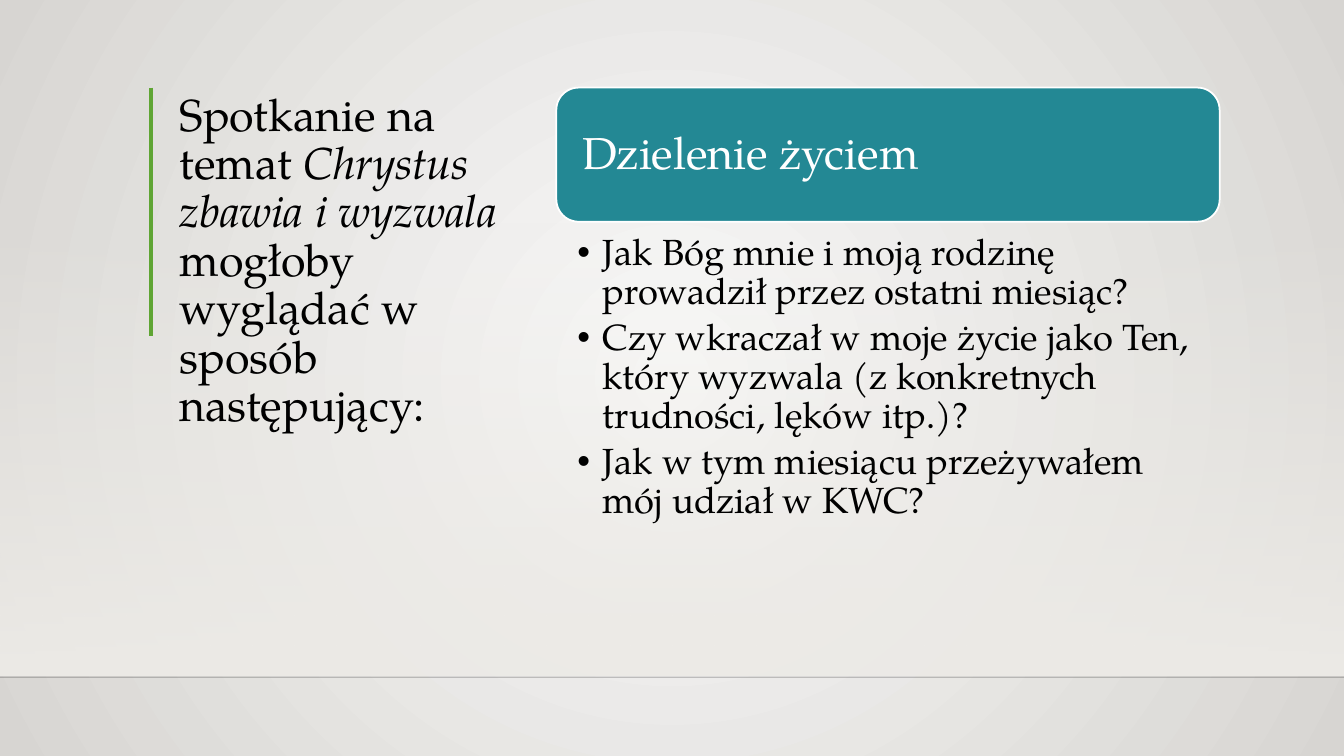
from lxml.etree import SubElement
from pptx import Presentation
from pptx.dml.color import RGBColor
from pptx.enum.shapes import MSO_CONNECTOR as Connector, MSO_SHAPE as Shape
from pptx.enum.text import MSO_ANCHOR as Anchor, MSO_AUTO_SIZE as AutoSize, PP_ALIGN as Align
from pptx.oxml.ns import qn
from pptx.util import Pt

COLORS = {
    "glow": "FAFAF9", "edge": "D7D5D2", "floor": "EDEBE7", "horizon": "000001",
    "accent": "5FA534", "card": "238894", "white": "FFFFFF", "text": "000000",
}
WIDTH, HEIGHT = 960, 540


def rgb(name):
    return RGBColor.from_string(COLORS[name])


def set_alpha(color_element, percent):
    SubElement(color_element, qn("a:alpha")).set("val", str(percent * 1000))


class SlideBuilder:
    font = "TeX Gyre Pagella"

    def __init__(self, slide):
        self.slide = slide

    def gradient(self, fill, start, end):
        fill.gradient()
        for stop, name in zip(fill.gradient_stops, (start, end)):
            stop.color.rgb = rgb(name)
        for stop, position in zip(fill.gradient_stops, (0, 1)):
            stop.position = position

    def background(self, center, edge):
        self.gradient(self.slide.background.fill, center, edge)
        linear = self.slide.element.find(".//" + qn("a:lin"))
        grad = linear.getparent()
        grad.remove(linear)
        radial = SubElement(grad, qn("a:path"))
        radial.set("path", "circle")
        focus = SubElement(radial, qn("a:fillToRect"))
        for side in "ltrb":
            focus.set(side, "50000")

    def shape(self, kind, left, top, width, height):
        shape = self.slide.shapes.add_shape(kind, Pt(left), Pt(top), Pt(width), Pt(height))
        shape.shadow.inherit = False
        return shape

    def fading_band(self, top, height, color):
        band = self.shape(Shape.RECTANGLE, 0, top, WIDTH, height)
        band.line.fill.background()
        self.gradient(band.fill, color, color)
        band.fill.gradient_angle = 270
        set_alpha(band.element.find(".//" + qn("a:gs"))[0], 0)

    def line(self, x1, y1, x2, y2, color, weight, opacity=100):
        line = self.slide.shapes.add_connector(
            Connector.STRAIGHT, Pt(x1), Pt(y1), Pt(x2), Pt(y2))
        line.line.color.rgb = rgb(color)
        line.line.width = Pt(weight)
        if opacity < 100:
            set_alpha(line.element.find(".//" + qn("a:srgbClr")), opacity)
        SubElement(line.element.spPr, qn("a:effectLst"))

    def frame(self, shape, anchor, insets):
        frame = shape.text_frame
        frame.word_wrap = True
        frame.auto_size = AutoSize.NONE
        frame.vertical_anchor = anchor
        (frame.margin_left, frame.margin_top,
         frame.margin_right, frame.margin_bottom) = map(Pt, insets)
        return frame

    def paragraph(self, paragraph, runs, size, color, after=0):
        paragraph.alignment = Align.LEFT
        paragraph.line_spacing = 0.9
        paragraph.space_before = Pt(0)
        paragraph.space_after = Pt(after)
        for text, italic in runs:
            run = paragraph.add_run()
            run.text = text
            run.font.name = self.font
            run.font.size = Pt(size)
            run.font.italic = italic
            run.font.color.rgb = rgb(color)

    def placeholder(self, index, left, top, width, height):
        holder = self.slide.placeholders[index]
        holder.left, holder.top = Pt(left), Pt(top)
        holder.width, holder.height = Pt(width), Pt(height)
        self.slide.shapes.element.append(holder.element)  # in front of the decoration
        return holder

    def title(self, runs, *box):
        frame = self.frame(self.placeholder(0, *box), Anchor.BOTTOM, (7.2, 3.6, 7.2, 3.6))
        self.paragraph(frame.paragraphs[0], runs, 32, "text")

    def card(self, heading, *box):
        card = self.shape(Shape.ROUNDED_RECTANGLE, *box)
        card.fill.solid()
        card.fill.fore_color.rgb = rgb("card")
        card.line.color.rgb = rgb("white")
        card.line.width = Pt(1.25)
        frame = self.frame(card, Anchor.MIDDLE, (13.7, 9.4, 13.7, 9.4))
        self.paragraph(frame.paragraphs[0], [(heading, False)], 32, "white")

    def bullets(self, items, *box):
        frame = self.frame(self.placeholder(1, *box), Anchor.TOP, (15, 3, 14.4, 3))
        for number, item in enumerate(items):
            paragraph = frame.add_paragraph() if number else frame.paragraphs[0]
            properties = paragraph._p.get_or_add_pPr()
            properties.set("marL", str(Pt(18)))
            properties.set("indent", str(-Pt(18)))
            SubElement(properties, qn("a:buFont")).set("typeface", "Arial")
            SubElement(properties, qn("a:buChar")).set("char", "•")
            self.paragraph(paragraph, [(item, False)], 26, "text", after=4.5)


def main():
    deck = Presentation()
    deck.slide_width, deck.slide_height = Pt(WIDTH), Pt(HEIGHT)
    meeting = SlideBuilder(deck.slides.add_slide(deck.slide_layouts[1]))

    # Backdrop
    meeting.background("glow", "edge")
    meeting.fading_band(158.4, 324, "floor")
    meeting.line(0, 483.8, WIDTH, 483.8, "horizon", 1, opacity=20)

    # Meeting topic
    meeting.line(108, 62.6, 108, 239.8, "accent", 3)
    meeting.title([
        ("Spotkanie na temat ", False),
        ("Chrystus zbawia i wyzwala", True),
        (" mogłoby wyglądać w sposób następujący:", False),
    ], 121, 62.6, 250.6, 249.1)

    # Sharing questions
    column_left, column_width = 397.4, 473.8
    meeting.card("Dzielenie życiem", column_left, 62.6, column_width, 95.8)
    meeting.bullets([
        "Jak Bóg mnie i moją rodzinę prowadził przez ostatni miesiąc?",
        "Czy wkraczał w moje życie jako Ten, który wyzwala (z konkretnych trudności, lęków itp.)?",
        "Jak w tym miesiącu przeżywałem mój udział w KWC?",
    ], column_left, 164.2, column_width, 260)

    deck.save("out.pptx")


if __name__ == "__main__":
    main()
